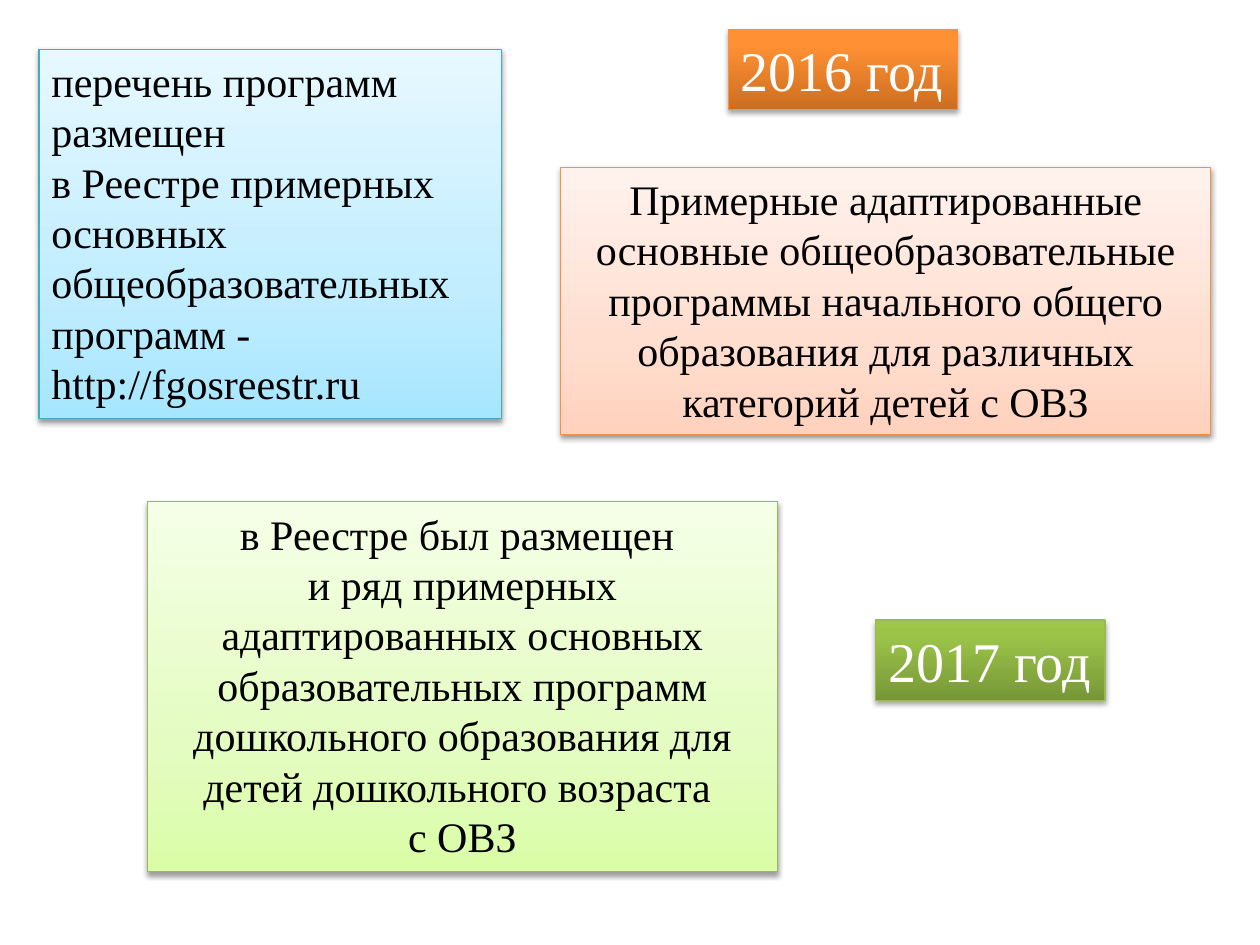
from lxml.etree import SubElement
from pptx import Presentation
from pptx.dml.color import RGBColor
from pptx.enum.text import MSO_AUTO_SIZE, PP_ALIGN
from pptx.oxml.ns import qn
from pptx.util import Inches, Pt

WIDTH, HEIGHT = Inches(10), Inches(7.5)
COLORS = {
    "black": "000000", "white": "FFFFFF",
    "blue line": "46AAC5", "orange line": "F69240", "green line": "98B955",
}
# Gradient stops run from the bottom edge to the top edge
GRADIENTS = {
    "pale blue": ("A7E6FF", "C1EDFF", "E7F8FF"),
    "pale orange": ("FFD2BD", "FFDED0", "FFF2ED"),
    "pale green": ("DAFDA7", "E4FCC2", "F5FFE7"),
    "orange": ("CC6E20", "FF9034", "FF9136"),
    "green": ("779737", "9BC348", "9DC746"),
}

prs = Presentation()
prs.slide_width, prs.slide_height = WIDTH, HEIGHT
slide = prs.slides.add_slide(prs.slide_layouts[6])


def add_card(paragraphs, area, gradient, line, size=24, color="black",
             align=PP_ALIGN.CENTER, wrap=True, middle_stop=35,
             shadow_alpha=38, shadow_distance=1.6):
    """Add a shaded text card; area is left, top, width, height as slide shares."""
    left, top, width, height = area
    card = slide.shapes.add_textbox(int(left * WIDTH), int(top * HEIGHT),
                                    int(width * WIDTH), int(height * HEIGHT))
    card.line.color.rgb = RGBColor.from_string(COLORS[line])
    card.line.width = Pt(0.75)

    card.fill.gradient()
    card.fill.gradient_angle = 90
    stops = next(card.element.iter(qn("a:gsLst")))
    stops.clear()
    for position, shade in zip((0, middle_stop, 100), GRADIENTS[gradient]):
        stop = SubElement(stops, qn("a:gs"), pos=str(position * 1000))
        SubElement(stop, qn("a:srgbClr"), val=shade)

    card.shadow.inherit = False
    effects = next(card.element.iter(qn("a:effectLst")))
    shadow = SubElement(effects, qn("a:outerShdw"), blurRad=str(Pt(3.1)),
                        dist=str(Pt(shadow_distance)), dir="5400000", rotWithShape="0")
    shade = SubElement(shadow, qn("a:srgbClr"), val=COLORS["black"])
    SubElement(shade, qn("a:alpha"), val=str(shadow_alpha * 1000))

    frame = card.text_frame
    frame.word_wrap = wrap
    frame.auto_size = MSO_AUTO_SIZE.SHAPE_TO_FIT_TEXT
    frame.text = "\n".join(paragraphs)
    for paragraph in frame.paragraphs:
        paragraph.alignment = align
        font = paragraph.runs[0].font
        font.name, font.size = "Times New Roman", Pt(size)
        font.color.rgb = RGBColor.from_string(COLORS[color])


add_card(["перечень программ размещен",
          "в Реестре примерных основных общеобразовательных программ - "
          "http://fgosreestr.ru"],
         (0.031, 0.052, 0.367, 0.391), "pale blue", "blue line",
         align=PP_ALIGN.LEFT)
add_card(["Примерные адаптированные основные общеобразовательные программы "
          "начального общего образования для различных категорий детей с ОВЗ"],
         (0.445, 0.177, 0.516, 0.283), "pale orange", "orange line")
add_card(["в Реестре был размещен ",
          "и ряд примерных адаптированных основных образовательных программ "
          "дошкольного образования для детей дошкольного возраста ",
          "с ОВЗ"],
         (0.117, 0.531, 0.5, 0.391), "pale green", "green line")

for year, left, top, tone in ((2017, 0.695, 0.656, "green"),
                              (2016, 0.578, 0.031, "orange")):
    add_card([f"{year} год"], (left, top, 0.182, 0.085), tone, f"{tone} line",
             size=32, color="white", align=PP_ALIGN.LEFT, wrap=False,
             middle_stop=80, shadow_alpha=35, shadow_distance=1.8)

prs.save("out.pptx")
